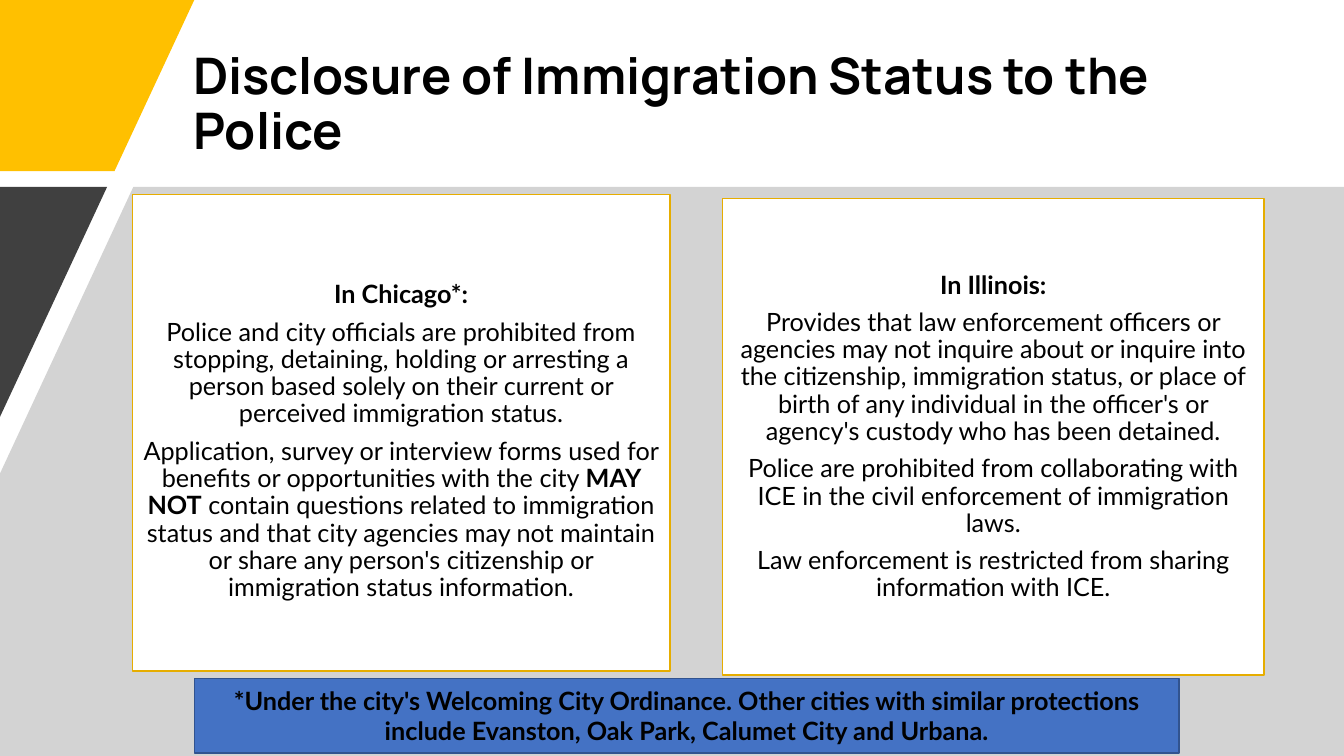
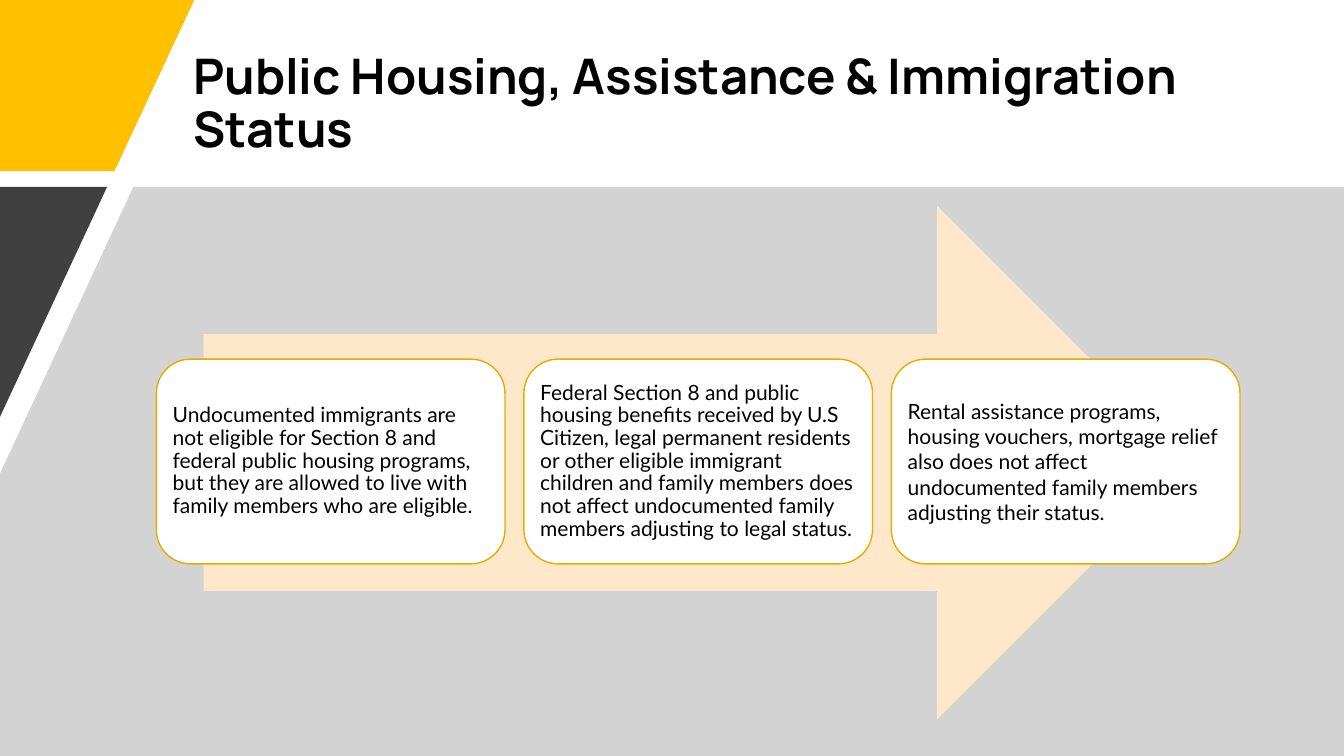
from pptx import Presentation
from pptx.dml.color import RGBColor
from pptx.enum.shapes import MSO_SHAPE
from pptx.enum.text import MSO_ANCHOR, PP_ALIGN
from pptx.util import Pt

PX = 9525
SLIDE_WIDTH, SLIDE_HEIGHT = 1280, 720
BAND_TOP = 178

BLACK = RGBColor(0x00, 0x00, 0x00)
WHITE = RGBColor(0xFF, 0xFF, 0xFF)
YELLOW = RGBColor(0xFF, 0xC0, 0x00)
GOLD = RGBColor(0xE6, 0xAD, 0x00)
CREAM = RGBColor(0xFF, 0xE8, 0xCA)
LIGHT_GRAY = RGBColor(0xD3, 0xD3, 0xD3)
DARK_GRAY = RGBColor(0x40, 0x40, 0x40)
BLUE = RGBColor(0x44, 0x72, 0xC4)
NAVY = RGBColor(0x31, 0x53, 0x8F)

TITLE_FONT = "Manrope"
BODY_FONT = "Lato"

BACKDROP = [
    (YELLOW, [(0, 0), (185, 0), (109, 163), (0, 163)]),
    (LIGHT_GRAY, [(127, BAND_TOP), (SLIDE_WIDTH, BAND_TOP),
                  (SLIDE_WIDTH, SLIDE_HEIGHT), (0, SLIDE_HEIGHT), (0, 451)]),
    (DARK_GRAY, [(0, BAND_TOP), (102, BAND_TOP), (0, 397)]),
]

CHICAGO = [
    [("In Chicago*:", True)],
    [("Police and city officials are prohibited from stopping, detaining, "
      "holding or arresting a person based solely on their current or "
      "perceived immigration status.", False)],
    [("Application, survey or interview forms used for benefits or "
      "opportunities with the city ", False),
     ("MAY NOT", True),
     (" contain questions related to immigration status and that city "
      "agencies may not maintain or share any person's citizenship or "
      "immigration status information.", False)],
]

ILLINOIS = [
    [("In Illinois:", True)],
    [("Provides that law enforcement officers or agencies may not inquire "
      "about or inquire into the citizenship, immigration status, or place "
      "of birth of any individual in the officer's or agency's custody who "
      "has been detained.", False)],
    [("Police are prohibited from collaborating with ICE in the civil "
      "enforcement of immigration laws.", False)],
    [("Law enforcement is restricted from sharing information with ICE.",
      False)],
]

ORDINANCE_NOTE = [[(
    "*Under the city's Welcoming City Ordinance. Other cities with similar "
    "protections include Evanston, Oak Park, Calumet City and Urbana.", True)]]

HOUSING_RULES = [
    ("Undocumented immigrants are not eligible for Section 8 "
     "and federal public housing programs, but they are allowed to live "
     "with family members who are eligible.", 0.9),
    ("Federal Section 8 and public housing benefits received by U.S Citizen, "
     "legal permanent residents or other eligible immigrant children and "
     "family members does not affect undocumented family members adjusting "
     "to legal status.", 0.9),
    ("Rental assistance programs, housing vouchers, mortgage relief also "
     "does not affect undocumented family members adjusting their status.",
     1.0),
]


def write_text(shape, paragraphs, size, font=BODY_FONT, align=PP_ALIGN.LEFT,
               line_spacing=0.9, gap=0, insets=(10, 5, 10, 5)):
    frame = shape.text_frame
    frame.word_wrap = True
    frame.vertical_anchor = MSO_ANCHOR.MIDDLE
    (frame.margin_left, frame.margin_top,
     frame.margin_right, frame.margin_bottom) = [inset * PX for inset in insets]
    for index, runs in enumerate(paragraphs):
        paragraph = frame.add_paragraph() if index else frame.paragraphs[0]
        paragraph.alignment = align
        paragraph.line_spacing = line_spacing
        if index and gap:
            paragraph.space_before = Pt(gap)
        for text, bold in runs:
            run = paragraph.add_run()
            run.text = text
            run.font.name = font
            run.font.size = Pt(size)
            run.font.bold = bold
            run.font.color.rgb = BLACK


def paint(shape, fill, line=None):
    shape.shadow.inherit = False
    shape.fill.solid()
    shape.fill.fore_color.rgb = fill
    if line is None:
        shape.line.fill.background()
    else:
        shape.line.color.rgb = line
        shape.line.width = Pt(1)


def add_box(slide, kind, bounds, fill, line=None):
    box = slide.shapes.add_shape(kind, *[length * PX for length in bounds])
    paint(box, fill, line)
    return box


def add_polygon(slide, points, fill):
    builder = slide.shapes.build_freeform(*points[0], scale=PX)
    builder.add_line_segments(points[1:], close=True)
    paint(builder.convert_to_shape(), fill)


def add_titled_slide(deck, title, size):
    slide = deck.slides.add_slide(deck.slide_layouts[6])
    for fill, points in BACKDROP:
        add_polygon(slide, points, fill)
    heading = slide.shapes.add_textbox(174 * PX, 38 * PX, 1034 * PX, 125 * PX)
    write_text(heading, [[(title, True)]], size, font=TITLE_FONT)
    return slide


def add_law_card(slide, bounds, paragraphs, top_inset):
    card = add_box(slide, MSO_SHAPE.RECTANGLE, bounds, WHITE, GOLD)
    write_text(card, paragraphs, 18, align=PP_ALIGN.CENTER, gap=7.3,
               insets=(9, top_inset, 9, 9))


def build_disclosure(deck):
    slide = add_titled_slide(
        deck, "Disclosure of Immigration Status to the Police", 36)
    add_law_card(slide, (126, 185, 512, 454), CHICAGO, 27)
    add_law_card(slide, (688, 189, 516, 454), ILLINOIS, 10)
    note = add_box(slide, MSO_SHAPE.RECTANGLE, (185, 646, 938, 71), BLUE, NAVY)
    write_text(note, ORDINANCE_NOTE, 18, align=PP_ALIGN.CENTER,
               line_spacing=1.0)


def build_housing(deck):
    slide = add_titled_slide(
        deck, "Public Housing, Assistance & Immigration Status", 35)
    add_box(slide, MSO_SHAPE.RIGHT_ARROW, (194, 196, 943, 489), CREAM)
    left, width, gap = 149, 332, 18
    for index, (rule, line_spacing) in enumerate(HOUSING_RULES):
        bounds = (left + index * (width + gap), 342, width, 195)
        card = add_box(slide, MSO_SHAPE.ROUNDED_RECTANGLE, bounds, WHITE, GOLD)
        write_text(card, [[(rule, False)]], 15, line_spacing=line_spacing,
                   insets=(6, 6, 6, 6))


def main():
    deck = Presentation()
    deck.slide_width = SLIDE_WIDTH * PX
    deck.slide_height = SLIDE_HEIGHT * PX
    build_disclosure(deck)
    build_housing(deck)
    deck.save("out.pptx")


if __name__ == "__main__":
    main()
